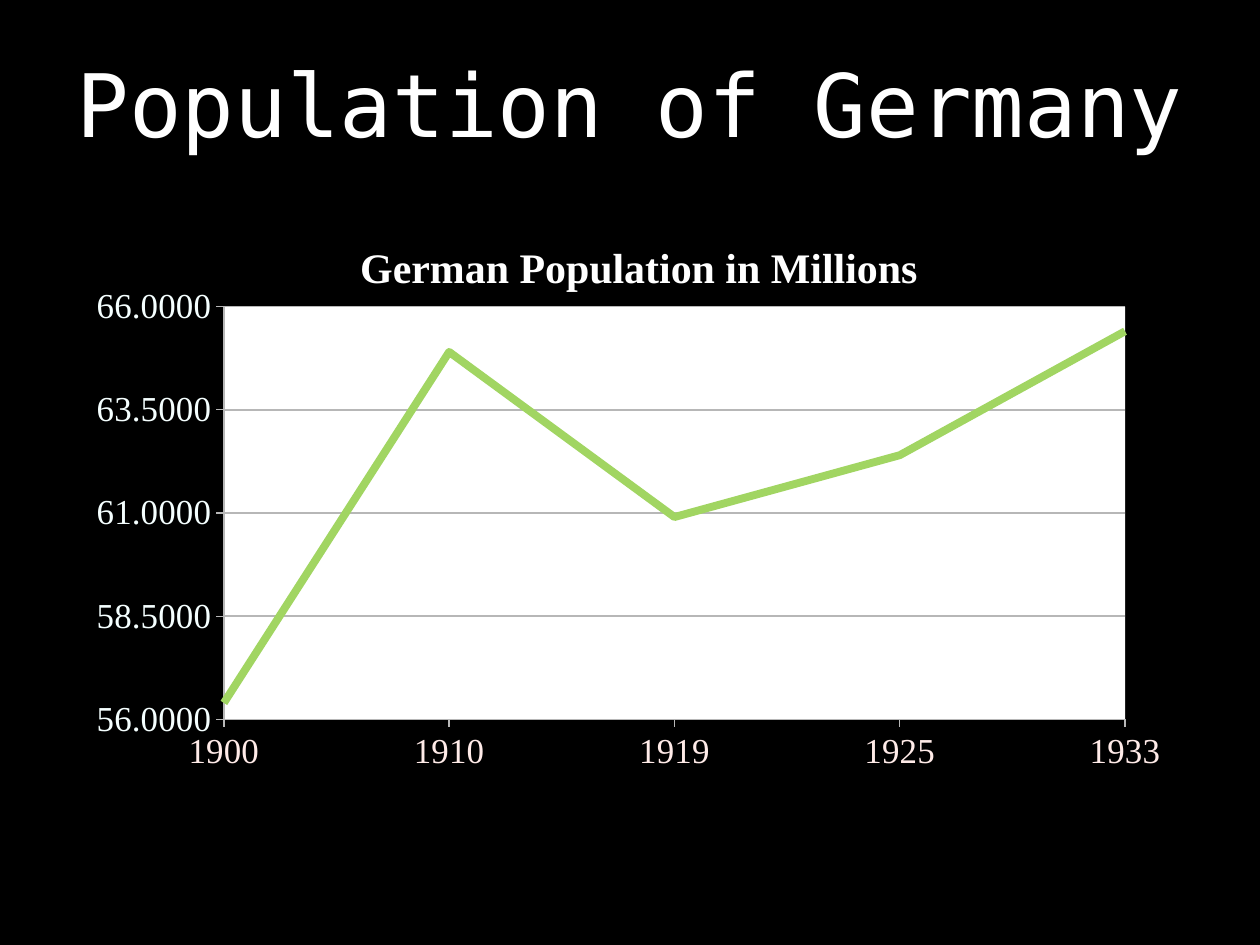
from lxml.etree import SubElement
from pptx import Presentation
from pptx.chart.data import CategoryChartData
from pptx.dml.color import RGBColor
from pptx.enum.chart import XL_CHART_TYPE, XL_TICK_LABEL_POSITION, XL_TICK_MARK
from pptx.enum.text import MSO_ANCHOR, PP_ALIGN
from pptx.oxml import parse_xml
from pptx.oxml.ns import nsdecls, qn
from pptx.util import Inches, Pt

HEADING = "Population of Germany"
CHART_TITLE = "German Population in Millions"
POPULATION = {"1900": 56.4, "1910": 64.9, "1919": 60.9, "1925": 62.4, "1933": 65.4}
SERIF = "Times New Roman"
BLACK, WHITE, GREY, GREEN = "000000", "FFFFFF", "B7B7B7", "A1D562"
YEAR_COLOR, VALUE_COLOR = "FFEBE8", "F5FFFF"
HEADING_BOX = (0.5, 0.3, 9, 1.03)
CHART_BOX = (0.67, 1.76, 8.54, 4.49)
PLOT_SHARES = {"x": 0.13, "y": 0.15, "w": 0.84, "h": 0.73}
TITLE_SHARES = {"x": 0.25, "y": 0.02}


def rgb(color):
    return RGBColor.from_string(color)


def style_font(font, name, size, color, bold=False):
    for key, value in {"name": name, "size": Pt(size), "bold": bold}.items():
        setattr(font, key, value)
    font.color.rgb = rgb(color)


def style_line(line, color, width):
    line.color.rgb = rgb(color)
    line.width = Pt(width)


def place(element, position, shares, inner=False):
    """Give a chart part a manual layout in shares of the chart's size."""
    for old in element.findall(qn("c:layout")):
        element.remove(old)
    layout = parse_xml(f"<c:layout {nsdecls('c')}><c:manualLayout/></c:layout>")
    settings = {"layoutTarget": "inner"} if inner else {}
    settings |= {f"{key}Mode": "edge" for key in "xy"} | shares
    for tag, value in settings.items():
        SubElement(layout[0], qn(f"c:{tag}")).set("val", str(value))
    element.insert(position, layout)


def add_heading(page):
    box = page.shapes.add_textbox(*map(Inches, HEADING_BOX))
    frame = box.text_frame
    frame.word_wrap = True
    frame.vertical_anchor = MSO_ANCHOR.MIDDLE
    for side in ("left", "right", "top", "bottom"):
        setattr(frame, f"margin_{side}", Inches(0.04))
    para = frame.paragraphs[0]
    para.alignment = PP_ALIGN.CENTER
    span = para.add_run()
    span.text = HEADING
    style_font(span.font, "DejaVu Sans Mono", 50, WHITE)


def style_axes(chart):
    years, values = chart.category_axis, chart.value_axis
    for axis, color in ((years, YEAR_COLOR), (values, VALUE_COLOR)):
        axis.major_tick_mark = XL_TICK_MARK.OUTSIDE
        axis.minor_tick_mark = XL_TICK_MARK.NONE
        style_font(axis.tick_labels.font, SERIF, 20, color)
        style_line(axis.format.line, GREY, 0.75)
    years.tick_label_position = XL_TICK_LABEL_POSITION.LOW
    scale = {"minimum_scale": 56, "maximum_scale": 66, "major_unit": 2.5}
    for key, value in scale.items():
        setattr(values, key, value)
    values.tick_labels.number_format = "0.0000"
    values.tick_labels.number_format_is_linked = False
    values.has_major_gridlines = True
    style_line(values.major_gridlines.format.line, GREY, 1)

    # Start the line on the value axis itself
    axis_xml = values._element
    for old in axis_xml.findall(qn("c:crossBetween")):
        axis_xml.remove(old)
    axis_xml.find(qn("c:crosses")).addnext(
        parse_xml(f'<c:crossBetween {nsdecls("c")} val="midCat"/>'))


def add_population_chart(page):
    data = CategoryChartData(number_format="0.0")
    data.categories = list(POPULATION)
    data.add_series(CHART_TITLE, list(POPULATION.values()))
    chart = page.shapes.add_chart(
        XL_CHART_TYPE.LINE, *map(Inches, CHART_BOX), data).chart
    style_font(chart.font, "Comic Neue", 10, WHITE)
    chart.has_legend = False
    chart.plots[0].vary_by_categories = False

    title = chart.chart_title
    title.text_frame.text = CHART_TITLE
    span = title.text_frame.paragraphs[0].runs[0]
    style_font(span.font, SERIF, 24, WHITE, bold=True)
    title._element.find(qn("c:overlay")).set("val", "1")
    place(title._element, 1, TITLE_SHARES)

    series = chart.plots[0].series[0]
    series.smooth = False
    style_line(series.format.line, GREEN, 4.5)
    style_axes(chart)

    plot_area = chart._chartSpace.chart.plotArea
    place(plot_area, 0, PLOT_SHARES, inner=True)
    plot_area.append(parse_xml(
        f'<c:spPr {nsdecls("c", "a")}><a:solidFill><a:srgbClr val="{WHITE}"/>'
        "</a:solidFill><a:ln><a:noFill/></a:ln></c:spPr>"))


def main():
    deck = Presentation()
    deck.slide_width, deck.slide_height = Inches(10), Inches(7.5)
    page = deck.slides.add_slide(deck.slide_layouts[6])
    page.background.fill.solid()
    page.background.fill.fore_color.rgb = rgb(BLACK)
    add_population_chart(page)
    add_heading(page)
    deck.save("out.pptx")


if __name__ == "__main__":
    main()
